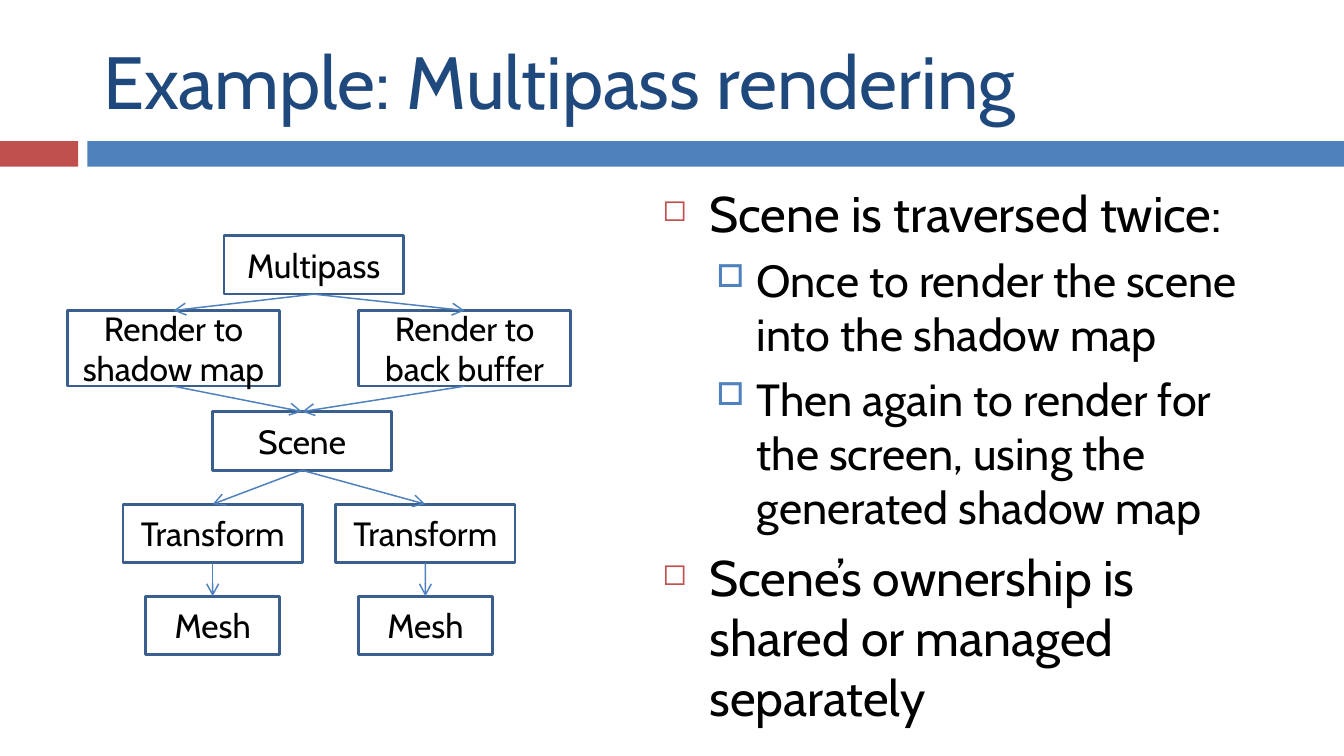
from lxml import etree
from pptx import Presentation
from pptx.dml.color import RGBColor
from pptx.enum import shapes, text
from pptx.oxml import ns
from pptx.util import Cm, Pt

FONT = "Cabin"
RED = RGBColor(0xC0, 0x50, 0x4D)
BLUE = RGBColor(0x4F, 0x81, 0xBD)
NAVY = RGBColor(0x1F, 0x49, 0x7D)
OUTLINE = RGBColor(0x3A, 0x5F, 0x8C)
BLACK = RGBColor(0, 0, 0)

TITLE = "Example: Multipass rendering"

# Bars under the title: left, width, colour
BARS = [(0, 1.48, RED), (1.65, 23.75, BLUE)]

# Bullets: level, wording
BULLETS = [
    (0, "Scene is traversed twice:"),
    (1, "Once to render the scene into the shadow map"),
    (1, "Then again to render for the screen, using the generated shadow map"),
    (0, "Scene’s ownership is shared or managed separately"),
]
LEVELS = [
    {"char": "◻", "color": RED, "percent": 60, "size": 26.8, "before": 7,
     "margin": 0.89, "hang": 0.89},
    {"char": "□", "color": BLUE, "percent": 70, "size": 24.1, "before": 5.5,
     "margin": 1.78, "hang": 0.76},
]

# Rows of the graph: top, box width, box height, {name: (centre, lines)}
ROWS = [
    (4.45, 3.39, 1.11, {"multipass": (5.93, ["Multipass"])}),
    (5.87, 4.02, 1.43, {"shadow pass": (3.28, ["Render to", "shadow map"]),
                        "screen pass": (8.78, ["Render to back buffer"])}),
    (7.78, 3.39, 1.11, {"scene": (5.71, ["Scene"])}),
    (9.53, 3.39, 1.11, {"left transform": (4.02, ["Transform"]),
                        "right transform": (8.04, ["Transform"])}),
    (11.27, 2.54, 1.11, {"left mesh": (4.02, ["Mesh"]),
                         "right mesh": (8.04, ["Mesh"])}),
]
EDGES = [
    ("multipass", "shadow pass"), ("multipass", "screen pass"),
    ("shadow pass", "scene"), ("screen pass", "scene"),
    ("scene", "left transform"), ("scene", "right transform"),
    ("left transform", "left mesh"), ("right transform", "right mesh"),
]
BOTTOM, TOP = 2, 0


def add_xml(parent, tag, **attributes):
    return etree.SubElement(parent, ns.qn(tag), attributes)


def write(para, wording, size, color):
    span = para.add_run()
    span.text = wording
    for name, value in {"name": FONT, "size": Pt(size)}.items():
        setattr(span.font, name, value)
    span.font.color.rgb = color


def add_rect(slide, left, top, width, height):
    box = slide.shapes.add_shape(shapes.MSO_SHAPE.RECTANGLE,
                                 Cm(left), Cm(top), Cm(width), Cm(height))
    box.shadow.inherit = False
    return box


def add_text_box(slide, left, top, width, height, anchor):
    box = slide.shapes.add_textbox(Cm(left), Cm(top), Cm(width), Cm(height))
    for name, value in {"word_wrap": True, "vertical_anchor": anchor}.items():
        setattr(box.text_frame, name, value)
    return box.text_frame


def paragraphs(frame, count):
    for _ in range(count - 1):
        frame.add_paragraph()
    return frame.paragraphs


def set_bullet(para, level):
    para.space_before = Pt(level["before"])
    props = para._p.get_or_add_pPr()
    props.set("marL", str(Cm(level["margin"])))
    props.set("indent", str(-Cm(level["hang"])))
    add_xml(add_xml(props, "a:buClr"), "a:srgbClr", val=str(level["color"]))
    add_xml(props, "a:buSzPct", val=str(level["percent"] * 1000))
    add_xml(props, "a:buChar", char=level["char"])


def add_node(slide, center, top, width, height, lines):
    box = add_rect(slide, center - width / 2, top, width, height)
    box.fill.background()
    box.line.color.rgb = OUTLINE
    box.line.width = Pt(1.5)
    frame = box.text_frame
    frame.word_wrap = True
    frame.vertical_anchor = text.MSO_ANCHOR.MIDDLE
    for para, line in zip(paragraphs(frame, len(lines)), lines):
        para.alignment = text.PP_ALIGN.CENTER
        write(para, line, 18, BLACK)
    return box


def add_arrow(slide, parent, child):
    arrow = slide.shapes.add_connector(shapes.MSO_CONNECTOR.STRAIGHT, 0, 0, 0, 0)
    arrow.begin_connect(parent, BOTTOM)
    arrow.end_connect(child, TOP)
    arrow.line.color.rgb = BLUE
    arrow.line.width = Pt(0.79)
    add_xml(arrow.line._get_or_add_ln(), "a:tailEnd", type="arrow")
    add_xml(arrow._element.spPr, "a:effectLst")


def main():
    deck = Presentation()
    deck.slide_width, deck.slide_height = Cm(25.4), Cm(14.29)
    slide = deck.slides.add_slide(deck.slide_layouts[6])

    for left, width, color in BARS:
        bar = add_rect(slide, left, 2.67, width, 0.48)
        bar.fill.solid()
        bar.fill.fore_color.rgb = color
        bar.line.fill.background()

    title = add_text_box(slide, 1.7, 0.48, 22.66, 2.06, text.MSO_ANCHOR.MIDDLE)
    write(title.paragraphs[0], TITLE, 39.6, NAVY)

    body = add_text_box(slide, 12.27, 3.33, 12.07, 9.37, text.MSO_ANCHOR.TOP)
    for para, (depth, wording) in zip(paragraphs(body, len(BULLETS)), BULLETS):
        level = LEVELS[depth]
        para.level = depth
        set_bullet(para, level)
        write(para, wording, level["size"], BLACK)

    nodes = {}
    for top, width, height, row in ROWS:
        for name, (center, lines) in row.items():
            nodes[name] = add_node(slide, center, top, width, height, lines)
    for parent, child in EDGES:
        add_arrow(slide, nodes[parent], nodes[child])

    deck.save("out.pptx")


if __name__ == "__main__":
    main()
